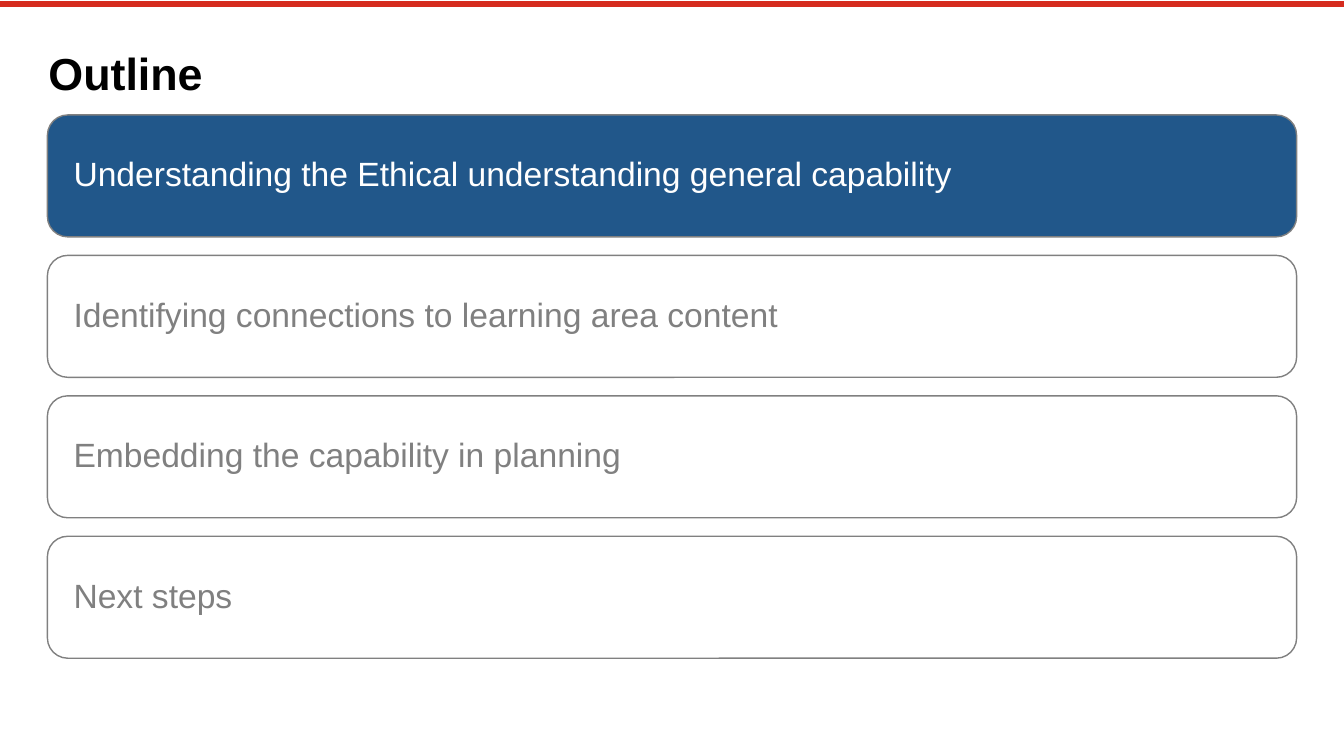
import pptx
import pptx.dml.color
import pptx.enum.shapes
import pptx.enum.text
import pptx.oxml.ns
import pptx.util
from pptx.util import Inches


def rgb(value):
    return pptx.dml.color.RGBColor.from_string(value)


def write(tf, text, size=24, color="000000", bold=False, spacing=1.0,
          anchor="MIDDLE", insets=(0, 0, 0, 0)):
    tf.word_wrap = True
    tf.auto_size = pptx.enum.text.MSO_AUTO_SIZE.NONE
    tf.vertical_anchor = pptx.enum.text.MSO_ANCHOR[anchor]
    tf.margin_left, tf.margin_top, tf.margin_right, tf.margin_bottom = map(Inches, insets)
    p = tf.paragraphs[0]
    p.alignment = pptx.enum.text.PP_ALIGN.LEFT
    p.line_spacing = spacing
    r = p.add_run()
    r.text = text
    r.font.name = "Arial"
    r.font.size = pptx.util.Pt(size)
    r.font.bold = bold
    r.font.color.rgb = rgb(color)


class OutlineSlide:
    RED = "D52B1E"
    BLUE = "21578A"
    GREY = "808080"
    WHITE = "FFFFFF"

    def __init__(self, prs):
        self.s = prs.slides.add_slide(prs.slide_layouts[5])
        self.s.background.fill.solid()
        self.s.background.fill.fore_color.rgb = rgb(self.WHITE)

    def rule(self, y, width):
        sp = self.s.shapes.add_connector(
            pptx.enum.shapes.MSO_CONNECTOR.STRAIGHT,
            0, Inches(y), Inches(width), Inches(y))
        sp.line.color.rgb = rgb(self.RED)
        sp.line.width = pptx.util.Pt(4.2)
        sp._element.spPr.append(pptx.oxml.parse_xml(
            "<a:effectLst %s/>" % pptx.oxml.ns.nsdecls("a")))

    def title(self, text, left, top, width, height):
        sp = self.s.shapes.title
        sp.left, sp.top, sp.width, sp.height = map(Inches, (left, top, width, height))
        write(sp.text_frame, text, size=32, bold=True, anchor="TOP", insets=(0, 0.05, 0, 0))

    def section(self, text, left, top, width, height, current=False):
        sp = self.s.shapes.add_shape(
            pptx.enum.shapes.MSO_SHAPE.ROUNDED_RECTANGLE,
            *map(Inches, (left, top, width, height)))
        sp.shadow.inherit = False
        sp.fill.solid()
        sp.fill.fore_color.rgb = rgb(self.BLUE if current else self.WHITE)
        sp.line.color.rgb = rgb(self.GREY)
        sp.line.width = pptx.util.Pt(1)
        write(sp.text_frame, text, color=self.WHITE if current else self.GREY,
              spacing=0.9, insets=(0.2, 0.1, 0.1, 0.1))


def main():
    prs = pptx.Presentation()
    prs.slide_width = Inches(13.33)
    prs.slide_height = Inches(7.5)

    outline = OutlineSlide(prs)
    outline.rule(0.04, 13.33)
    outline.title("Outline", 0.48, 0.4, 12.39, 0.52)

    sections = [
        "Understanding the Ethical understanding general capability",
        "Identifying connections to learning area content",
        "Embedding the capability in planning",
        "Next steps",
    ]
    first_top, last_top = 1.14, 5.32
    pitch = (last_top - first_top) / (len(sections) - 1)
    for i, text in enumerate(sections):
        outline.section(text, 0.47, first_top + i * pitch, 12.39, 1.21, current=i == 0)

    prs.save("out.pptx")


if __name__ == "__main__":
    main()
